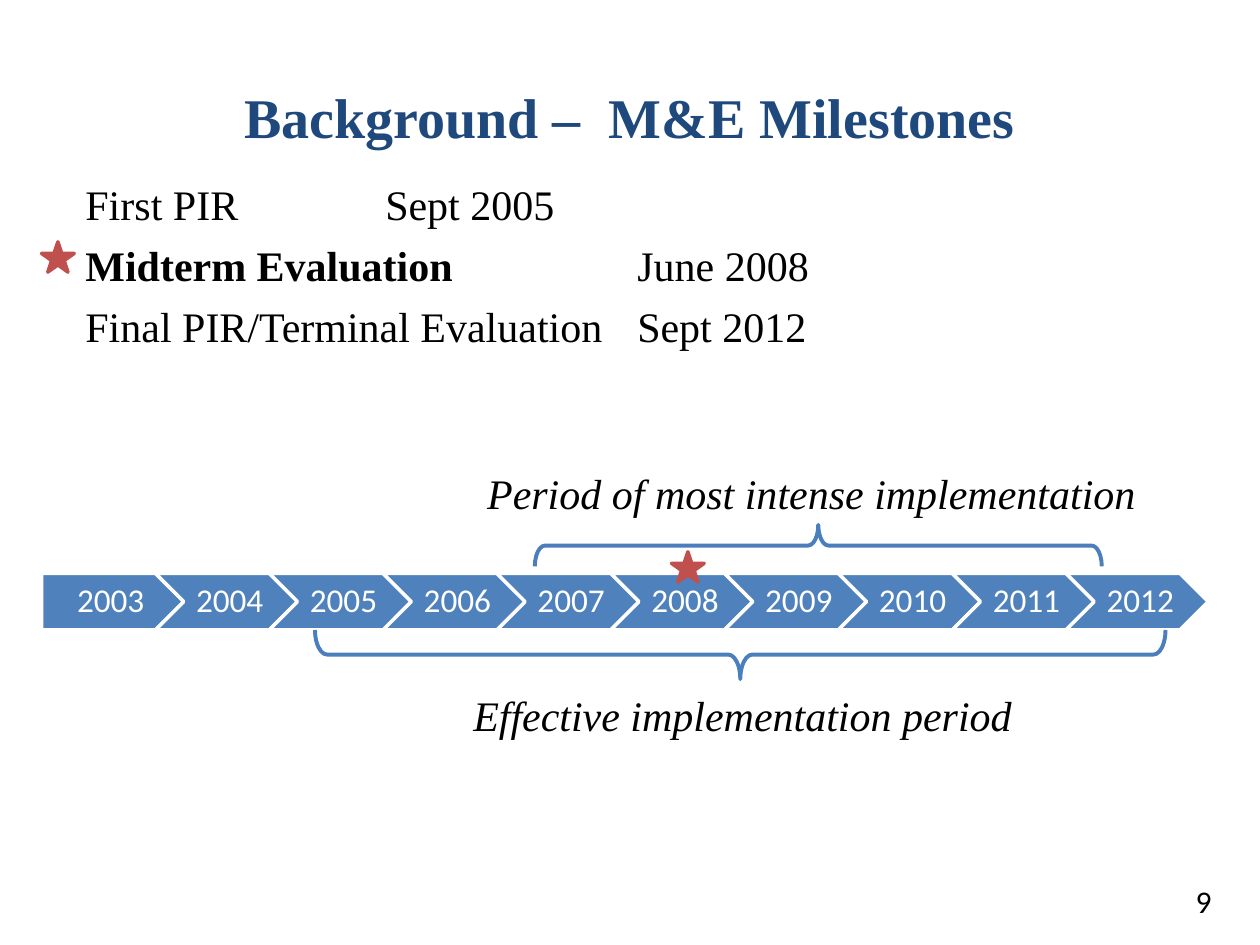
from pptx import Presentation
from pptx.dml.color import RGBColor
from pptx.enum.shapes import MSO_SHAPE
from pptx.enum.text import MSO_ANCHOR, PP_ALIGN
from pptx.util import Inches, Pt

SERIF = "Times New Roman"
SANS = "Calibri"
BLACK = "000000"
WHITE = "FFFFFF"
NAVY = "1F497D"
BLUE = "4F81BD"
BRACE_BLUE = "4B7EBC"
RED = "C0504D"

MILESTONES = [
    ("First PIR", "\t\t\tSept 2005", False),
    ("Midterm Evaluation", "\t\t\tJune 2008", True),
    ("Final PIR/Terminal Evaluation", "\tSept 2012", False),
]
FIRST_YEAR, LAST_YEAR = 2003, 2012
TIMELINE_LEFT, TIMELINE_TOP = 0.33, 4.55
YEAR_WIDTH, YEAR_HEIGHT = 1.13, 0.45
YEAR_STEP = 8.13 / (LAST_YEAR - FIRST_YEAR)


def color(hex_value):
    return RGBColor.from_string(hex_value)


def style_font(paragraph, name, size, hex_value, bold=None, italic=None):
    font = paragraph.font
    font.name = name
    font.size = Pt(size)
    font.color.rgb = color(hex_value)
    font.bold = bold
    font.italic = italic


def style_outline(shape, hex_value, width):
    shape.shadow.inherit = False
    shape.line.color.rgb = color(hex_value)
    shape.line.width = Pt(width)


def add_title(slide, wording):
    title = slide.shapes.title
    title.left, title.top = Inches(0.5), Inches(0.3)
    title.width, title.height = Inches(9), Inches(1.25)
    title.text_frame.vertical_anchor = MSO_ANCHOR.MIDDLE
    paragraph = title.text_frame.paragraphs[0]
    paragraph.text = wording
    paragraph.alignment = PP_ALIGN.CENTER
    style_font(paragraph, SERIF, 32, NAVY, bold=True)


def add_frame(slide, left, top, width, height):
    box = slide.shapes.add_textbox(
        Inches(left), Inches(top), Inches(width), Inches(height))
    box.text_frame.word_wrap = True
    return box.text_frame


def add_milestones(slide):
    frame = add_frame(slide, 0.58, 1.37, 9, 4.9)
    for index, (event, date, is_key) in enumerate(MILESTONES):
        paragraph = frame.paragraphs[0] if index == 0 else frame.add_paragraph()
        properties = paragraph._p.get_or_add_pPr()
        properties.set("marL", str(Inches(0.38)))
        properties.set("indent", str(Inches(-0.38)))
        if index:
            paragraph.space_before = Pt(6)
        style_font(paragraph, SERIF, 24, BLACK)
        event_run = paragraph.add_run()
        event_run.text = event
        event_run.font.bold = is_key
        paragraph.add_run().text = date


def add_caption(slide, wording, left, top, width):
    paragraph = add_frame(slide, left, top, width, 0.5).paragraphs[0]
    paragraph.text = wording
    paragraph.alignment = PP_ALIGN.CENTER
    style_font(paragraph, SERIF, 24, BLACK, italic=True)


def add_page_number(slide, number):
    paragraph = add_frame(slide, 9.39, 6.95, 0.61, 0.4).paragraphs[0]
    paragraph.text = str(number)
    style_font(paragraph, SANS, 18, BLACK)


def add_timeline(slide):
    timeline = slide.shapes.add_group_shape()
    for index, year in enumerate(range(FIRST_YEAR, LAST_YEAR + 1)):
        is_first = index == 0
        arrow = timeline.shapes.add_shape(
            MSO_SHAPE.PENTAGON if is_first else MSO_SHAPE.CHEVRON,
            Inches(TIMELINE_LEFT + index * YEAR_STEP), Inches(TIMELINE_TOP),
            Inches(YEAR_WIDTH), Inches(YEAR_HEIGHT))
        arrow.fill.solid()
        arrow.fill.fore_color.rgb = color(BLUE)
        style_outline(arrow, WHITE, 2)
        frame = arrow.text_frame
        frame.vertical_anchor = MSO_ANCHOR.MIDDLE
        frame.margin_left = Inches(0.11 if is_first else 0.08)
        frame.margin_right = Inches(0.03)
        frame.margin_top = frame.margin_bottom = Inches(0.06)
        paragraph = frame.paragraphs[0]
        paragraph.text = str(year)
        paragraph.alignment = PP_ALIGN.CENTER
        paragraph.line_spacing = 0.9
        style_font(paragraph, SANS, 19, WHITE)


def add_brace(slide, left, top, depth, span, rotation):
    brace = slide.shapes.add_shape(
        MSO_SHAPE.RIGHT_BRACE,
        Inches(left), Inches(top), Inches(depth), Inches(span))
    brace.rotation = rotation
    brace.adjustments[0] = 0.245
    brace.fill.background()
    style_outline(brace, BRACE_BLUE, 2.25)


def add_star(slide, left, top):
    star = slide.shapes.add_shape(
        MSO_SHAPE.STAR_5_POINT,
        Inches(left), Inches(top), Inches(0.26), Inches(0.24))
    star.fill.solid()
    star.fill.fore_color.rgb = color(RED)
    style_outline(star, RED, 2)


def main():
    presentation = Presentation()
    presentation.slide_width = Inches(10)
    presentation.slide_height = Inches(7.5)
    slide = presentation.slides.add_slide(presentation.slide_layouts[5])

    add_title(slide, "Background –  M&E Milestones")
    add_milestones(slide)
    add_page_number(slide, 9)
    add_timeline(slide)
    add_brace(slide, 5.68, 1.82, 0.39, 6.75, 90)
    add_caption(slide, "Effective implementation period", 3.33, 5.42, 5.13)
    add_brace(slide, 6.33, 2.08, 0.33, 4.5, 270)
    add_caption(slide, "Period of most intense implementation", 3.38, 3.66, 6.12)
    add_star(slide, 5.33, 4.38)
    add_star(slide, 0.33, 1.92)

    presentation.save("out.pptx")


if __name__ == "__main__":
    main()
